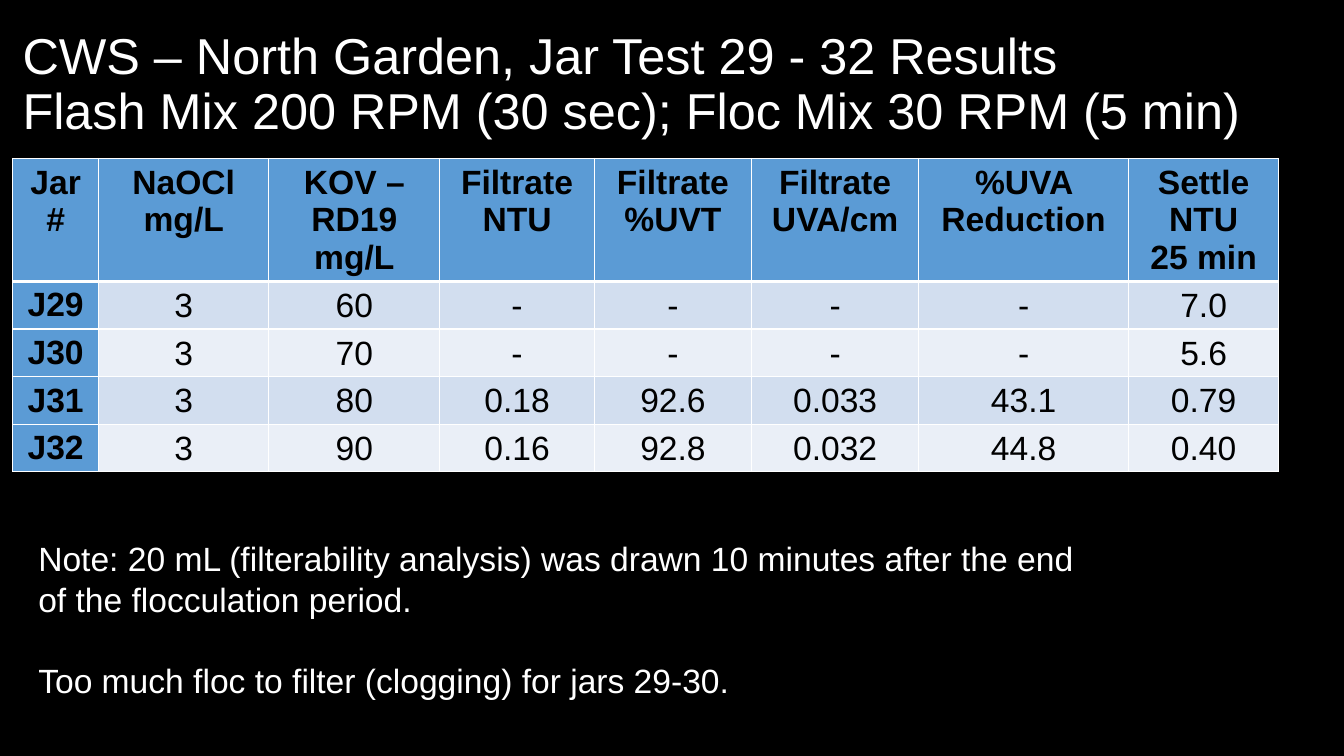
from lxml.etree import SubElement
from pptx import Presentation
from pptx.dml.color import RGBColor
from pptx.enum.text import MSO_ANCHOR as ANCHOR, PP_ALIGN as ALIGN
from pptx.oxml.ns import qn
from pptx.util import Pt

PX = 9525
BLACK = RGBColor(0x00, 0x00, 0x00)
WHITE = RGBColor(0xFF, 0xFF, 0xFF)
BLUE = RGBColor(0x5B, 0x9B, 0xD5)
BANDS = [RGBColor(0xD2, 0xDE, 0xEF), RGBColor(0xEA, 0xEF, 0xF7)]


def add_run(p, text, size, color, bold=False):
    r = p.add_run()
    r.text = text
    r.font.name = "Arial"
    r.font.size = Pt(size)
    r.font.bold = bold
    r.font.color.rgb = color


def add_border(cell, side, width):
    ln = SubElement(cell._tc.get_or_add_tcPr(), qn(f"a:ln{side}"), w=str(Pt(width)))
    fill = SubElement(ln, qn("a:solidFill"))
    SubElement(fill, qn("a:srgbClr"), val=str(WHITE))


prs = Presentation()
prs.slide_width = 1280 * PX
prs.slide_height = 720 * PX
s = prs.slides.add_slide(prs.slide_layouts[6])
s.background.fill.solid()
s.background.fill.fore_color.rgb = BLACK

title = s.shapes.add_textbox(12 * PX, 12 * PX, 1251 * PX, 139 * PX)
tf = title.text_frame
tf.word_wrap = True
tf.vertical_anchor = ANCHOR.MIDDLE
p = tf.paragraphs[0]
p.line_spacing = 0.9
add_run(p, "CWS – North Garden, Jar Test 29 - 32 Results", 36, WHITE)
p.add_line_break()
add_run(p, "Flash Mix 200 RPM (30 sec); Floc Mix 30 RPM (5 min)", 36, WHITE)

rows = [
    ["Jar#", "NaOCl\nmg/L", "KOV – RD19\nmg/L", "Filtrate\nNTU", "Filtrate\n%UVT",
     "Filtrate\nUVA/cm", "%UVA Reduction", "Settle\nNTU\n25 min"],
    ["J29", "3", "60", "-", "-", "-", "-", "7.0"],
    ["J30", "3", "70", "-", "-", "-", "-", "5.6"],
    ["J31", "3", "80", "0.18", "92.6", "0.033", "43.1", "0.79"],
    ["J32", "3", "90", "0.16", "92.8", "0.032", "44.8", "0.40"],
]
widths = [82, 162, 163, 147, 150, 159, 200, 143]
heights = [117, 45, 45, 45, 45]

frame = s.shapes.add_table(len(rows), len(widths), 12 * PX, 151 * PX,
                           sum(widths) * PX, sum(heights) * PX)
table = frame.table
for col, width in zip(table.columns, widths):
    col.width = width * PX
for row, height in zip(table.rows, heights):
    row.height = height * PX

for i, values in enumerate(rows):
    for j, value in enumerate(values):
        cell = table.cell(i, j)
        heading = i == 0 or j == 0
        for side in "LRTB":
            thick = (side == "B" and i == 0) or (side == "T" and i == 1)
            add_border(cell, side, 3 if thick else 1)
        cell.fill.solid()
        cell.fill.fore_color.rgb = BLUE if heading else BANDS[(i - 1) % 2]
        if not heading:
            cell.vertical_anchor = ANCHOR.MIDDLE
            cell.margin_left = cell.margin_right = cell.margin_top = PX
            cell.margin_bottom = 0
        tf = cell.text_frame
        for k, line in enumerate(value.split("\n")):
            p = tf.add_paragraph() if k else tf.paragraphs[0]
            p.alignment = ALIGN.CENTER
            p.line_spacing = Pt(26.8)
            add_run(p, line, 24, BLACK, heading)

notes = [
    ("Note: 20 mL (filterability analysis) was drawn 10 minutes after the end", 0),
    ("of the flocculation period.", 0),
    ("Too much floc to filter (clogging) for jars 29-30.", 29),
]
note = s.shapes.add_textbox(27 * PX, 508 * PX, 1024 * PX, 165 * PX)
tf = note.text_frame
tf.word_wrap = True
for k, (line, gap) in enumerate(notes):
    p = tf.add_paragraph() if k else tf.paragraphs[0]
    p.space_before = Pt(gap)
    add_run(p, line, 24, WHITE)

prs.save("out.pptx")
